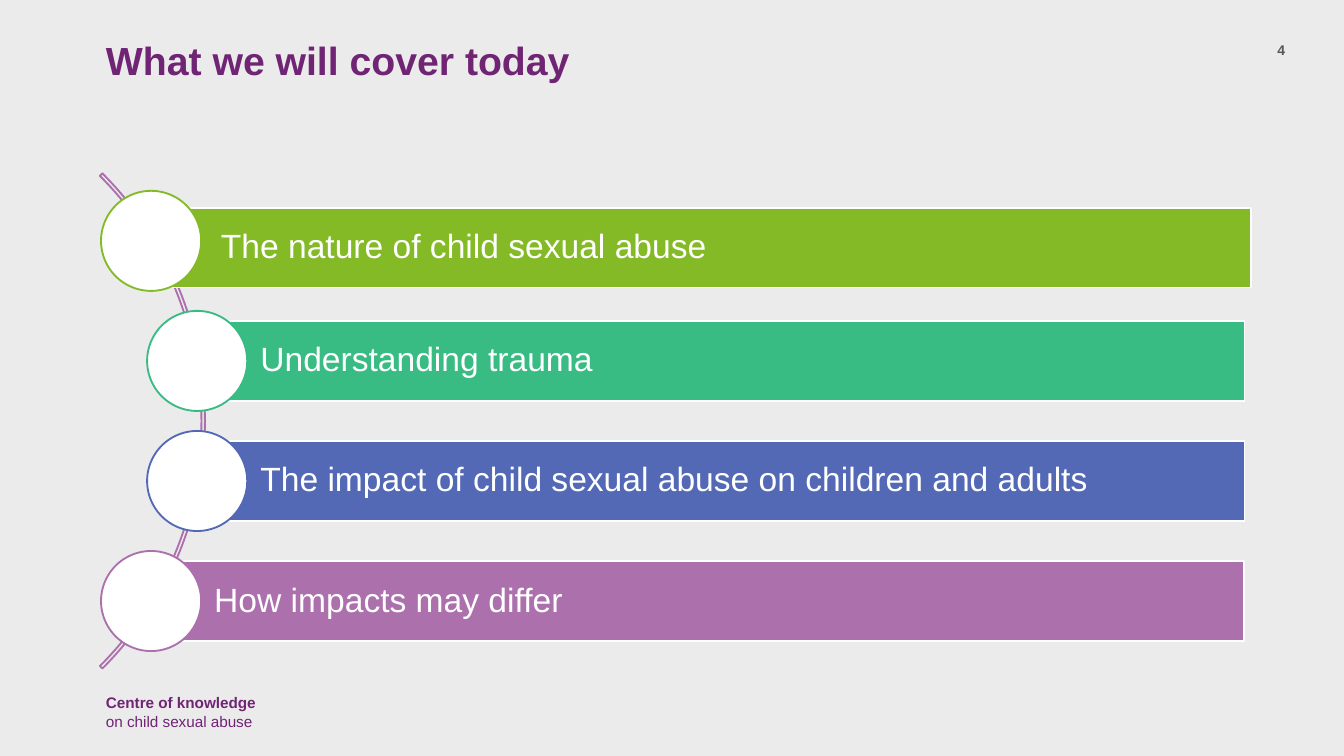
from dataclasses import dataclass

from pptx import Presentation
from pptx.dml.color import RGBColor
from pptx.enum.shapes import MSO_SHAPE
from pptx.enum.text import MSO_ANCHOR, PP_ALIGN
from pptx.util import Inches, Pt

TITLE = "What we will cover today"
PAGE = "4"
FOOTER = ("Centre of knowledge", "on child sexual abuse")
TOPICS = [
    {"text": "The nature of child sexual abuse", "color": "83BA26", "indent": 0, "nudge": 0.5},
    {"text": "Understanding trauma", "color": "39BB84", "indent": 1, "nudge": 0},
    {"text": "The impact of child sexual abuse on children and adults",
     "color": "5369B6", "indent": 1, "nudge": 0},
    {"text": "How impacts may differ", "color": "AC70AD", "indent": 0, "nudge": 0},
]


@dataclass(frozen=True)
class Theme:
    font: str = "Arial"
    background: str = "ECEBEC"
    brand: str = "702474"
    muted: str = "555859"
    light: str = "FFFFFF"
    arc: str = "AC70AD"
    title_size: float = 21
    topic_size: float = 18
    footer_size: float = 8.2
    page_size: float = 7.5
    line_width: float = 1


THEME = Theme()
WIDTH = Inches(10)
HEIGHT = WIDTH * 9 // 16
COLUMNS = 100
CELL = WIDTH / COLUMNS

MARGIN, TOP = 6.9, 2.6
FIRST_ROW, LAST_ROW = 14.2, 41
PITCH = (LAST_ROW - FIRST_ROW) / (len(TOPICS) - 1)
CIRCLE, CIRCLE_LEFT, INDENT = 7.45, 7.52, 3.43
BAR_HEIGHT, BAR_RIGHT, TEXT_INSET = 5.95, 92.6, 4.7
ARC_SIZE, ARC_RIGHT = 52.1, 15.25
ARC_ANGLES = (189, 27, 0.005)


def cells(*values):
    return [round(v * CELL) for v in values]


def rgb(color):
    return RGBColor.from_string(color)


def style_run(r, size, color, bold=False):
    r.font.name = THEME.font
    r.font.size = Pt(size)
    r.font.bold = bold
    r.font.color.rgb = rgb(color)


def add_label(s, box, lines, size, color, bolds=(True,), align=PP_ALIGN.LEFT, spacing=1):
    tf = s.shapes.add_textbox(*cells(*box)).text_frame
    tf.word_wrap = True
    p = tf.paragraphs[0]
    p.text = "\v".join(lines)
    p.alignment = align
    p.line_spacing = spacing
    for r, bold in zip(p.runs, bolds):
        style_run(r, size, color, bold)


def add_outlined(s, kind, box, line, fill=None):
    sp = s.shapes.add_shape(kind, *cells(*box))
    sp.shadow.inherit = False
    sp.line.color.rgb = rgb(line)
    sp.line.width = Pt(THEME.line_width)
    if fill:
        sp.fill.solid()
        sp.fill.fore_color.rgb = rgb(fill)
    else:
        sp.fill.background()
    return sp


def add_arc(s):
    middle = (FIRST_ROW + LAST_ROW + CIRCLE) / 2
    box = (ARC_RIGHT - ARC_SIZE, middle - ARC_SIZE / 2, ARC_SIZE, ARC_SIZE)
    sp = add_outlined(s, MSO_SHAPE.BLOCK_ARC, box, THEME.arc)
    for i, value in enumerate(ARC_ANGLES):
        sp.adjustments[i] = value


def add_topic(s, row, topic):
    top = FIRST_ROW + row * PITCH
    left = CIRCLE_LEFT + topic["indent"] * INDENT
    bar_left = left + CIRCLE / 2
    bar_top = top + (CIRCLE - BAR_HEIGHT) / 2
    nudge = topic["nudge"]
    box = (bar_left + nudge, bar_top + nudge, BAR_RIGHT - bar_left, BAR_HEIGHT)
    sp = add_outlined(s, MSO_SHAPE.RECTANGLE, box, THEME.light, topic["color"])
    tf = sp.text_frame
    tf.text = topic["text"]
    tf.word_wrap = True
    tf.vertical_anchor = MSO_ANCHOR.MIDDLE
    tf.margin_left, tf.margin_right = cells(TEXT_INSET, 0.5)
    p = tf.paragraphs[0]
    p.alignment = PP_ALIGN.LEFT
    p.line_spacing = 0.9
    style_run(p.runs[0], THEME.topic_size, THEME.light)
    add_outlined(s, MSO_SHAPE.OVAL, (left, top, CIRCLE, CIRCLE), topic["color"], THEME.light)


def main():
    prs = Presentation()
    prs.slide_width, prs.slide_height = WIDTH, HEIGHT
    s = prs.slides.add_slide(prs.slide_layouts[6])
    s.background.fill.solid()
    s.background.fill.fore_color.rgb = rgb(THEME.background)

    add_label(s, (MARGIN, 51.1, 17.9, 3.8), FOOTER, THEME.footer_size, THEME.brand, (True, False))
    add_label(s, (MARGIN, TOP, 83.6, 7), [TITLE], THEME.title_size, THEME.brand, spacing=0.9)
    add_arc(s)
    for row, topic in enumerate(TOPICS):
        add_topic(s, row, topic)
    add_label(s, (91.5, TOP, 5.1, 2.6), [PAGE], THEME.page_size, THEME.muted, align=PP_ALIGN.RIGHT)
    prs.save("out.pptx")


if __name__ == "__main__":
    main()
